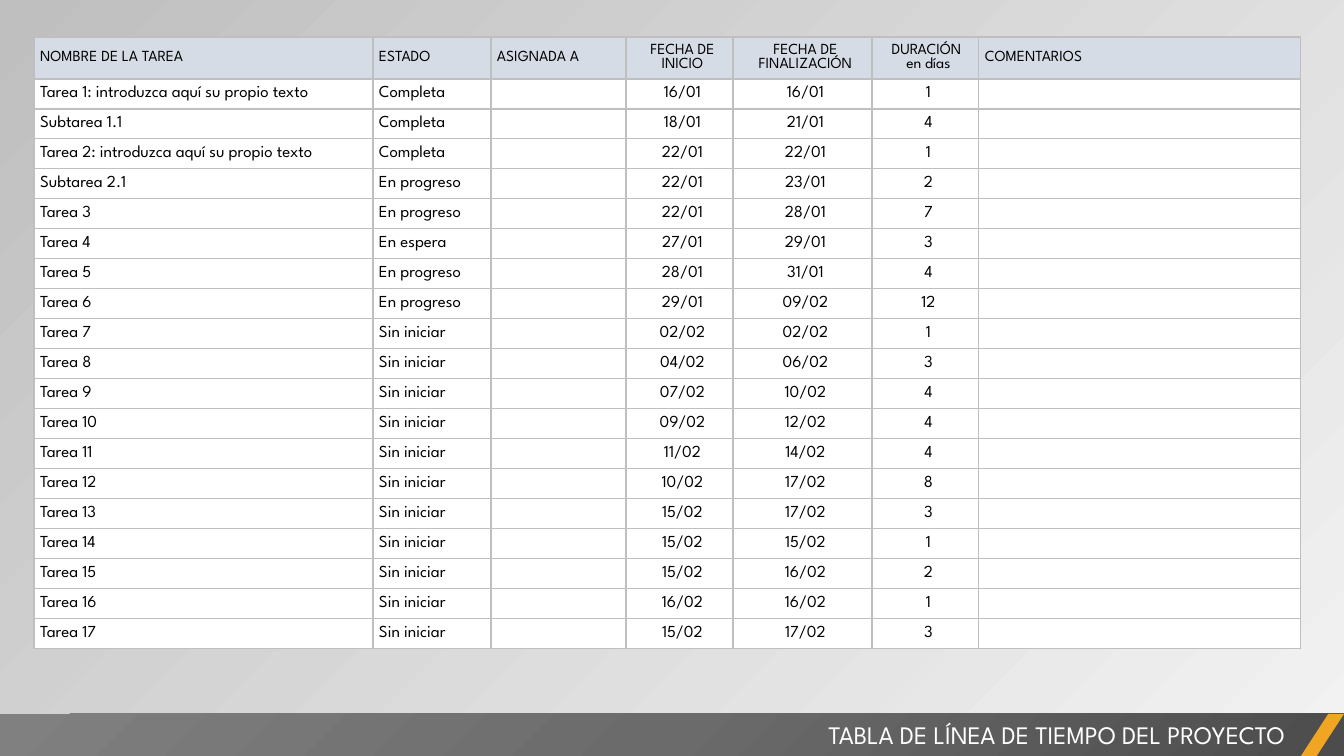
from pptx import Presentation
from pptx.dml.color import RGBColor
from pptx.enum.shapes import MSO_SHAPE
from pptx.enum.text import MSO_ANCHOR, MSO_AUTO_SIZE, PP_ALIGN
from pptx.oxml import parse_xml
from pptx.oxml.ns import nsdecls, qn
from pptx.util import Pt

EMU_PER_PX = 914400 / 100.8
SLIDE_W, SLIDE_H = 1344, 756

FONT = "League Spartan"
BLACK = RGBColor(0x00, 0x00, 0x00)
WHITE = RGBColor(0xFF, 0xFF, 0xFF)
HEADER_BLUE = RGBColor(0xD6, 0xDC, 0xE5)
GRID_GREY = RGBColor(0xBF, 0xBF, 0xBF)
PALE_GREY = RGBColor(0xF2, 0xF2, 0xF2)
BAR_DARK = RGBColor(0x4C, 0x4C, 0x4C)
BAR_MIDDLE = RGBColor(0x6B, 0x6B, 0x6B)
BAR_LIGHT = RGBColor(0x80, 0x80, 0x80)
AMBER = RGBColor(0xF0, 0xA6, 0x22)

LEFT, CENTER, RIGHT = PP_ALIGN.LEFT, PP_ALIGN.CENTER, PP_ALIGN.RIGHT
MIDDLE = MSO_ANCHOR.MIDDLE
GROW = MSO_AUTO_SIZE.SHAPE_TO_FIT_TEXT
RECTANGLE, PARALLELOGRAM = MSO_SHAPE.RECTANGLE, MSO_SHAPE.PARALLELOGRAM

HEADER_H, ROW_H = 42, 30
CELL_INSET = 6
COLUMNS = [
    ("NOMBRE DE LA TAREA", 339, LEFT),
    ("ESTADO", 118, LEFT),
    ("ASIGNADA A", 135, LEFT),
    ("FECHA DE INICIO", 107, CENTER),
    ("FECHA DE FINALIZACIÓN", 139, CENTER),
    ("DURACIÓN \nen días", 107, CENTER),
    ("COMENTARIOS", 322, LEFT),
]
DONE, ACTIVE, WAITING, NOT_STARTED = "Completa", "En progreso", "En espera", "Sin iniciar"
TASKS = [
    ("Tarea 1: introduzca aquí su propio texto", DONE, "16/01", "16/01", 1),
    ("Subtarea 1.1", DONE, "18/01", "21/01", 4),
    ("Tarea 2: introduzca aquí su propio texto", DONE, "22/01", "22/01", 1),
    ("Subtarea 2.1", ACTIVE, "22/01", "23/01", 2),
    ("Tarea 3", ACTIVE, "22/01", "28/01", 7),
    ("Tarea 4", WAITING, "27/01", "29/01", 3),
    ("Tarea 5", ACTIVE, "28/01", "31/01", 4),
    ("Tarea 6", ACTIVE, "29/01", "09/02", 12),
    ("Tarea 7", NOT_STARTED, "02/02", "02/02", 1),
    ("Tarea 8", NOT_STARTED, "04/02", "06/02", 3),
    ("Tarea 9", NOT_STARTED, "07/02", "10/02", 4),
    ("Tarea 10", NOT_STARTED, "09/02", "12/02", 4),
    ("Tarea 11", NOT_STARTED, "11/02", "14/02", 4),
    ("Tarea 12", NOT_STARTED, "10/02", "17/02", 8),
    ("Tarea 13", NOT_STARTED, "15/02", "17/02", 3),
    ("Tarea 14", NOT_STARTED, "15/02", "15/02", 1),
    ("Tarea 15", NOT_STARTED, "15/02", "16/02", 2),
    ("Tarea 16", NOT_STARTED, "16/02", "16/02", 1),
    ("Tarea 17", NOT_STARTED, "15/02", "17/02", 3),
]


def px(length):
    return round(length * EMU_PER_PX)


def set_gradient(element, fill, stops, shading):
    """Fill with (percent, colour, opacity percent) stops and a shading tag."""
    fill.gradient()
    gradient = element.find(".//" + qn("a:gradFill"))
    stop_xml = "".join(
        f'<a:gs pos="{pos * 1000}"><a:srgbClr val="{color}">'
        f'<a:alpha val="{opacity * 1000}"/></a:srgbClr></a:gs>'
        for pos, color, opacity in stops)
    gradient.getparent().replace(gradient, parse_xml(
        f'<a:gradFill {nsdecls("a")} rotWithShape="1">'
        f"<a:gsLst>{stop_xml}</a:gsLst>{shading}</a:gradFill>"))


def add_run(paragraph, text, size, color, align):
    paragraph.alignment = align
    run = paragraph.add_run()
    run.text = text
    run.font.name = FONT
    run.font.size = Pt(size)
    run.font.color.rgb = color


def add_borders(cell):
    properties = cell._tc.get_or_add_tcPr()
    for side in ("lnL", "lnR", "lnT", "lnB"):
        properties.append(parse_xml(
            f'<a:{side} {nsdecls("a")} w="{Pt(1)}"><a:solidFill>'
            f'<a:srgbClr val="{GRID_GREY}"/></a:solidFill></a:{side}>'))


def fill_cell(cell, text, size, background, align):
    add_borders(cell)
    cell.fill.solid()
    cell.fill.fore_color.rgb = background
    cell.vertical_anchor = MIDDLE
    cell.margin_left = px(CELL_INSET)
    cell.margin_right = cell.margin_top = cell.margin_bottom = 0
    frame = cell.text_frame
    if not text:
        # Keeps an empty cell from stretching its row
        frame.paragraphs[0]._p.append(parse_xml(
            f'<a:endParaRPr {nsdecls("a")} sz="{size * 100}"/>'))
        return
    for i, line in enumerate(text.split("\n")):
        paragraph = frame.add_paragraph() if i else frame.paragraphs[0]
        add_run(paragraph, line, size, BLACK, align)


def add_background(slide):
    set_gradient(slide.element, slide.background.fill,
                 [(0, PALE_GREY, 40), (100, GRID_GREY, 100)],
                 f'<a:lin ang="{225 * 60000}" scaled="0"/>')


def add_task_table(slide, left, top):
    width = sum(column[1] for column in COLUMNS)
    height = HEADER_H + ROW_H * len(TASKS)
    table = slide.shapes.add_table(
        len(TASKS) + 1, len(COLUMNS), px(left), px(top), px(width), px(height)).table
    rows = [[title for title, _, _ in COLUMNS]]
    rows += [[name, status, "", start, end, str(days), ""]
             for name, status, start, end, days in TASKS]
    for column, (_, column_width, _) in zip(table.columns, COLUMNS):
        column.width = px(column_width)
    for r, texts in enumerate(rows):
        row_height, size, background = (
            (ROW_H, 12, WHITE) if r else (HEADER_H, 11, HEADER_BLUE))
        table.rows[r].height = px(row_height)
        for c, text in enumerate(texts):
            fill_cell(table.cell(r, c), text, size, background, COLUMNS[c][2])


def add_plain_shape(slide, preset, left, top, width, height):
    shape = slide.shapes.add_shape(preset, px(left), px(top), px(width), px(height))
    shape.shadow.inherit = False
    shape.line.fill.background()
    return shape


def add_footer(slide, top, width, height):
    bar = add_plain_shape(slide, RECTANGLE, 0, top, width, height)
    set_gradient(bar.element, bar.fill,
                 [(0, BAR_DARK, 100), (50, BAR_MIDDLE, 100), (100, BAR_LIGHT, 100)],
                 '<a:path path="circle"><a:fillToRect l="100000" t="100000"/></a:path>')

    accent_w = 43
    accent = add_plain_shape(slide, PARALLELOGRAM, width - accent_w, top, accent_w, height)
    accent.adjustments[0] = 0.65
    accent.fill.solid()
    accent.fill.fore_color.rgb = AMBER

    title_w, title_right = 1203, width - 49
    title = slide.shapes.add_textbox(
        px(title_right - title_w), px(top), px(title_w), px(40))
    frame = title.text_frame
    frame.word_wrap = True
    frame.auto_size = GROW
    add_run(frame.paragraphs[0], "TABLA DE LÍNEA DE TIEMPO DEL PROYECTO", 18, WHITE, RIGHT)


def main():
    deck = Presentation()
    deck.slide_width, deck.slide_height = px(SLIDE_W), px(SLIDE_H)
    slide = deck.slides.add_slide(deck.slide_layouts[6])
    add_background(slide)
    add_task_table(slide, 34, 37)
    add_footer(slide, 714, SLIDE_W, 42)
    deck.save("out.pptx")


if __name__ == "__main__":
    main()
